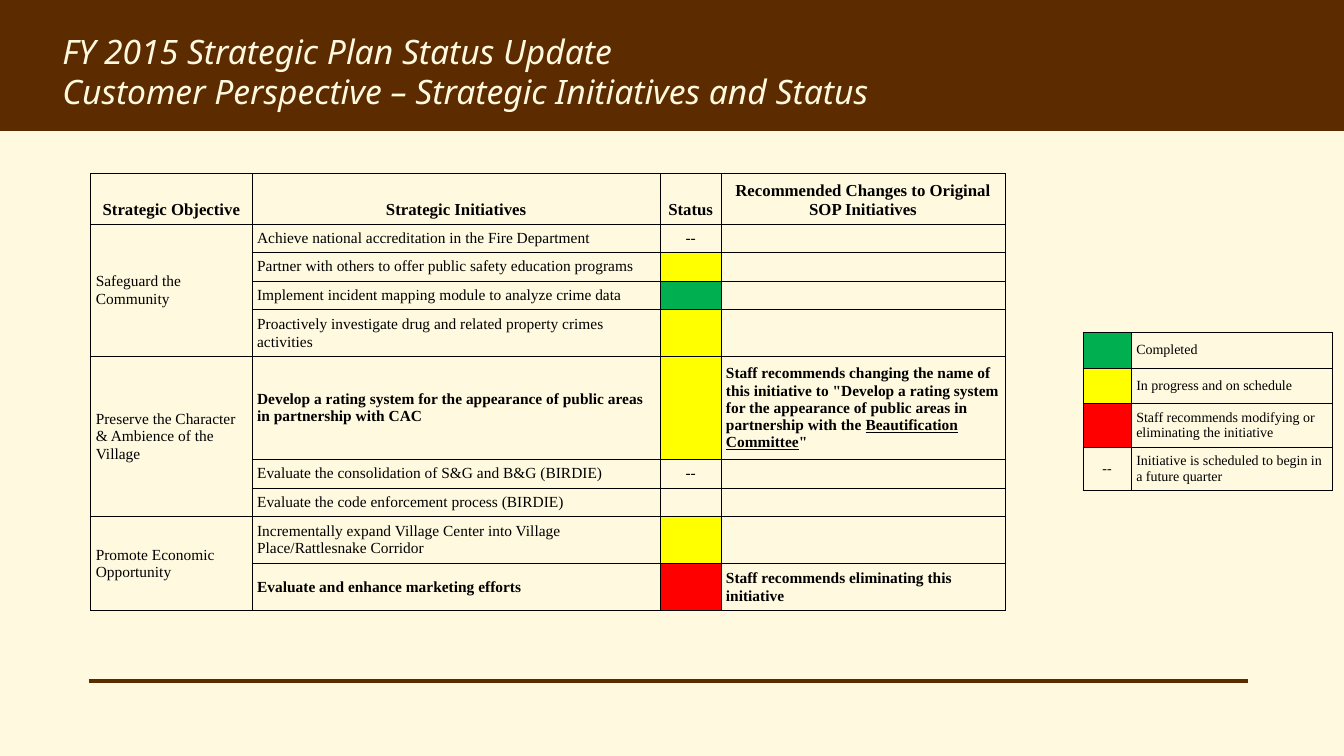
from lxml.etree import SubElement
from pptx import Presentation
from pptx.dml.color import RGBColor
from pptx.enum.shapes import MSO_CONNECTOR, MSO_SHAPE
from pptx.enum.text import MSO_ANCHOR, PP_ALIGN
from pptx.oxml.ns import qn
from pptx.util import Inches, Pt

CREAM = RGBColor(0xFF, 0xF9, 0xDF)
BROWN = RGBColor(0x5D, 0x2B, 0x00)
BLACK = RGBColor(0x00, 0x00, 0x00)
GREEN = RGBColor(0x00, 0xB0, 0x50)
YELLOW = RGBColor(0xFF, 0xFF, 0x00)
RED = RGBColor(0xFF, 0x00, 0x00)
TITLE_FONT = "Noto Sans"
TABLE_FONT = "Times New Roman"
FUTURE = "--"

HEADINGS = ["Strategic Objective", "Strategic Initiatives", "Status",
            "Recommended Changes to Original SOP Initiatives"]
RENAMING = [
    'Staff recommends changing the name of this initiative to "Develop a rating system '
    "for the appearance of public areas in partnership with the ",
    "Beautification Committee", '"']

# Each objective holds rows of: initiative, status, recommended change, row height
OBJECTIVES = {
    "Safeguard the Community": [
        ("Achieve national accreditation in the Fire Department", FUTURE, [], 0.28),
        ("Partner with others to offer public safety education programs", YELLOW, [], 0.28),
        ("Implement incident mapping module to analyze crime data", GREEN, [], 0.28),
        ("Proactively investigate drug and related property crimes activities",
         YELLOW, [], 0.46),
    ],
    "Preserve the Character & Ambience of the Village": [
        ("Develop a rating system for the appearance of public areas in partnership with CAC",
         YELLOW, RENAMING, 1.01),
        ("Evaluate the consolidation of S&G and B&G (BIRDIE)", FUTURE, [], 0.28),
        ("Evaluate the code enforcement process (BIRDIE)", None, [], 0.28),
    ],
    "Promote Economic Opportunity": [
        ("Incrementally expand Village Center into Village Place/Rattlesnake Corridor",
         YELLOW, [], 0.46),
        ("Evaluate and enhance marketing efforts", RED,
         ["Staff recommends eliminating this initiative"], 0.46),
    ],
}
LEGEND = [
    (GREEN, "Completed", 0.35),
    (YELLOW, "In progress and on schedule", 0.35),
    (RED, "Staff recommends modifying or eliminating the initiative", 0.43),
    (FUTURE, "Initiative is scheduled to begin in a future quarter", 0.43),
]


def add_band(page, width):
    band = page.shapes.add_shape(MSO_SHAPE.RECTANGLE, 0, 0, width, Inches(1.3))
    band.shadow.inherit = False
    band.fill.solid()
    band.fill.fore_color.rgb = BROWN
    band.line.fill.background()


def add_rule(page):
    rule = page.shapes.add_connector(
        MSO_CONNECTOR.STRAIGHT, Inches(0.88), Inches(6.76), Inches(12.38), Inches(6.76))
    rule.line.color.rgb = BROWN
    rule.line.width = Pt(3)
    SubElement(rule._element.spPr, qn("a:effectLst"))


def add_title(page, lines):
    box = page.shapes.add_textbox(Inches(0.52), Inches(0.25), Inches(12.29), Inches(0.91))
    frame = box.text_frame
    frame.word_wrap = True
    frame.vertical_anchor = MSO_ANCHOR.MIDDLE
    frame.text = "\n".join(lines)
    for paragraph in frame.paragraphs:
        for span in paragraph.runs:
            span.font.name = TITLE_FONT
            span.font.size = Pt(24)
            span.font.italic = True
            span.font.color.rgb = CREAM


def add_borders(cell):
    properties = cell._tc.get_or_add_tcPr()
    for position, side in enumerate(("a:lnL", "a:lnR", "a:lnT", "a:lnB")):
        border = properties.makeelement(qn(side), {"w": str(Pt(0.5))})
        fill = SubElement(border, qn("a:solidFill"))
        SubElement(fill, qn("a:srgbClr"), val=str(BLACK))
        properties.insert(position, border)


def write_cell(cell, parts, size, bold=False, centred=False, anchor=MSO_ANCHOR.MIDDLE):
    """Write the parts as runs; every second part is underlined."""
    cell.vertical_anchor = anchor
    paragraph = cell.text_frame.paragraphs[0]
    if centred:
        paragraph.alignment = PP_ALIGN.CENTER
    for index, part in enumerate(parts):
        span = paragraph.add_run()
        span.text = part
        span.font.name = TABLE_FONT
        span.font.size = Pt(size)
        span.font.bold = bold
        span.font.underline = index % 2 == 1
        span.font.color.rgb = BLACK
    if not parts:
        # Keep empty cells from stretching their row
        SubElement(paragraph._p, qn("a:endParaRPr"), sz=str(size * 100))


def write_status(cell, status, size):
    write_cell(cell, [FUTURE] if status == FUTURE else [], size, centred=True)
    if isinstance(status, RGBColor):
        cell.fill.solid()
        cell.fill.fore_color.rgb = status


def add_grid(page, left, top, widths, heights):
    table = page.shapes.add_table(
        len(heights), len(widths), Inches(left), Inches(top),
        Inches(sum(widths)), Inches(sum(heights))).table
    table.first_row = False
    table.horz_banding = False
    for column, width in zip(table.columns, widths):
        column.width = Inches(width)
    for row, height in zip(table.rows, heights):
        row.height = Inches(height)
    for cell in table.iter_cells():
        cell.margin_left = cell.margin_right = Inches(0.05)
        cell.margin_top = cell.margin_bottom = Inches(0.05)
        cell.fill.background()
        add_borders(cell)
    return table


def add_initiatives(page):
    heights = [0.5] + [row[3] for rows in OBJECTIVES.values() for row in rows]
    table = add_grid(page, 0.9, 1.72, [1.6, 4.05, 0.6, 2.82], heights)
    for column, heading in enumerate(HEADINGS):
        write_cell(table.cell(0, column), [heading], 12, True, True, MSO_ANCHOR.BOTTOM)
    first = 1
    for objective, rows in OBJECTIVES.items():
        following = first + len(rows)
        table.cell(first, 0).merge(table.cell(following - 1, 0))
        write_cell(table.cell(first, 0), [objective], 11)
        for number, (initiative, status, change, _) in enumerate(rows, first):
            bold = bool(change)
            write_cell(table.cell(number, 1), [initiative], 11, bold)
            write_status(table.cell(number, 2), status, 11)
            write_cell(table.cell(number, 3), change, 11, bold)
        first = following


def add_legend(page):
    table = add_grid(page, 10.74, 3.3, [0.48, 1.99], [row[2] for row in LEGEND])
    for number, (status, meaning, _) in enumerate(LEGEND):
        write_status(table.cell(number, 0), status, 10)
        write_cell(table.cell(number, 1), [meaning], 10)


def main():
    deck = Presentation()
    deck.slide_width = Inches(13.33)
    deck.slide_height = Inches(7.5)
    page = deck.slides.add_slide(deck.slide_layouts[6])
    page.background.fill.solid()
    page.background.fill.fore_color.rgb = CREAM

    # Frame and title
    add_rule(page)
    add_band(page, deck.slide_width)
    add_title(page, ["FY 2015 Strategic Plan Status Update",
                     "Customer Perspective – Strategic Initiatives and Status"])

    # Tables
    add_initiatives(page)
    add_legend(page)
    deck.save("out.pptx")


if __name__ == "__main__":
    main()
